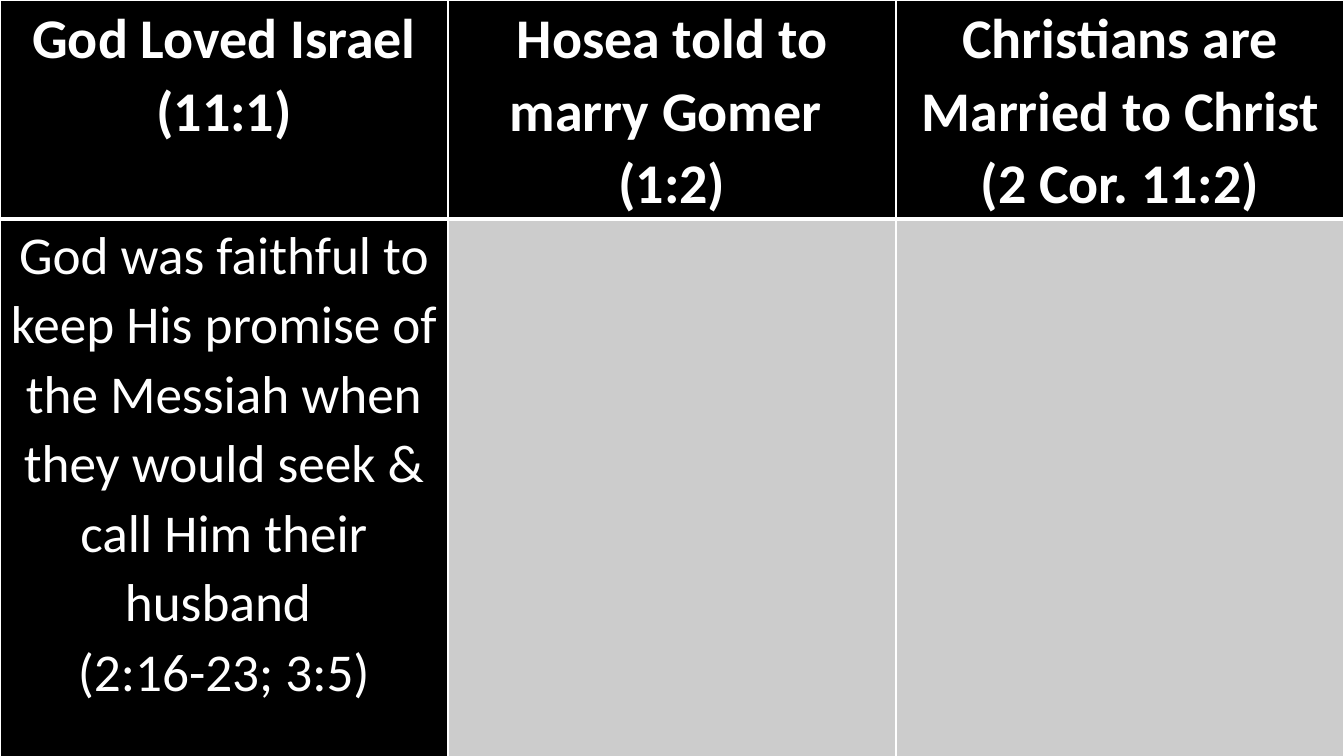
import pptx
import pptx.dml.color
import pptx.enum.text
import pptx.oxml
import pptx.oxml.ns
import pptx.util
from pptx.util import Inches

COLUMNS = [
    {
        "heading": ["God Loved Israel (11:1)"],
        "answer": [
            "God was faithful to keep His promise of the Messiah when "
            "they would seek & call Him their husband ",
            "(2:16-23; 3:5)",
        ],
    },
    {"heading": ["Hosea told to marry Gomer ", "(1:2)"], "answer": []},
    {"heading": ["Christians are Married to Christ (2 Cor. 11:2)"], "answer": []},
]

THEME = {
    "background": "000000",
    "filled": "000000",
    "open": "CCCCCC",
    "ink": "FFFFFF",
    "rule": "FFFFFF",
    "thin": 1,
    "thick": 3,
    "fonts": {
        "heading": {"name": "Calibri", "size": pptx.util.Pt(40), "bold": True},
        "answer": {"name": "Calibri", "size": pptx.util.Pt(38), "bold": False},
    },
    "line_spacing": 1.07,
}
MARGINS = {
    "margin_left": Inches(0.07),
    "margin_top": 0,
    "margin_right": Inches(0.07),
    "margin_bottom": 0,
}
ROW_HEIGHTS = {"heading": Inches(2.12), "answer": Inches(5.38)}
SLIDE_WIDTH, SLIDE_HEIGHT = Inches(13.33), Inches(7.5)


def set_format(target, values):
    for name, value in values.items():
        setattr(target, name, value)


def color(name):
    return pptx.dml.color.RGBColor.from_string(THEME[name])


def add_borders(cell, row_name):
    """Rule all four sides, with a thick line between the two rows."""
    widths = dict.fromkeys(("lnL", "lnR", "lnT", "lnB"), THEME["thin"])
    widths["lnB" if row_name == "heading" else "lnT"] = THEME["thick"]
    properties = cell._tc.get_or_add_tcPr()
    for position, (side, width) in enumerate(widths.items()):
        border = pptx.oxml.parse_xml(
            f'<a:{side} {pptx.oxml.ns.nsdecls("a")} w="{pptx.util.Pt(width)}">'
            f'<a:solidFill><a:srgbClr val="{THEME["rule"]}"/></a:solidFill>'
            f'<a:prstDash val="solid"/></a:{side}>'
        )
        properties.insert(position, border)


def fill_cell(cell, row_name, lines):
    set_format(cell, MARGINS)
    cell.fill.solid()
    cell.fill.fore_color.rgb = color("filled" if lines else "open")
    add_borders(cell, row_name)
    for index, line in enumerate(lines):
        frame = cell.text_frame
        para = frame.add_paragraph() if index else frame.paragraphs[0]
        set_format(para, {
            "alignment": pptx.enum.text.PP_ALIGN.CENTER,
            "line_spacing": THEME["line_spacing"],
        })
        span = para.add_run()
        span.text = line
        set_format(span.font, THEME["fonts"][row_name])
        span.font.color.rgb = color("ink")


def main():
    deck = pptx.Presentation()
    set_format(deck, {"slide_width": SLIDE_WIDTH, "slide_height": SLIDE_HEIGHT})
    page = deck.slides.add_slide(deck.slide_layouts.get_by_name("Blank"))
    page.background.fill.solid()
    page.background.fill.fore_color.rgb = color("background")

    table = page.shapes.add_table(
        len(ROW_HEIGHTS), len(COLUMNS), 0, 0, SLIDE_WIDTH, SLIDE_HEIGHT
    ).table
    set_format(table, {"first_row": False, "horz_banding": False})
    for row_index, (row_name, height) in enumerate(ROW_HEIGHTS.items()):
        table.rows[row_index].height = height
        for column_index, column in enumerate(COLUMNS):
            fill_cell(table.cell(row_index, column_index), row_name, column[row_name])

    deck.save("out.pptx")


if __name__ == "__main__":
    main()
